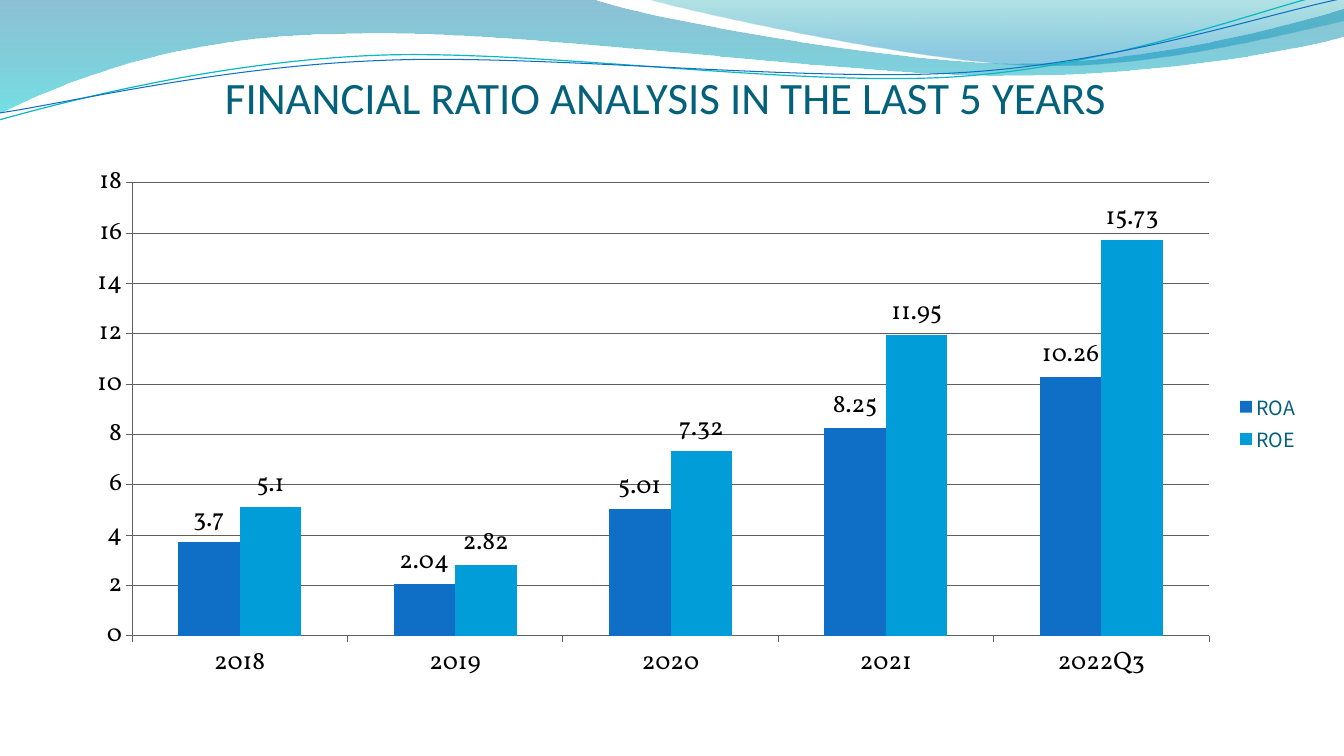
import pptx
import pptx.chart.data
import pptx.dml.color
import pptx.enum.chart
import pptx.enum.text
import pptx.oxml.ns
import pptx.util
import lxml.etree

RGB = pptx.dml.color.RGBColor
DEEP_BLUE = RGB(0x00, 0x74, 0xA1)
CYAN = RGB(0x00, 0xC6, 0xCF)
TEAL = RGB(0x00, 0xA1, 0xA9)
SKY = RGB(0x00, 0x8B, 0xBF)
TEAL_LINE = RGB(0x0A, 0xB8, 0xBF)
BLUE = RGB(0x0F, 0x6F, 0xC6)
LIGHT_BLUE = RGB(0x00, 0x9D, 0xD9)
TITLE_BLUE = RGB(0x04, 0x61, 0x7B)
BLACK = RGB(0x00, 0x00, 0x00)
GREY = RGB(0x60, 0x60, 0x60)
qn = pptx.oxml.ns.qn


def apply(target, values):
    for name, value in values.items():
        setattr(target, name, value)


def draw_outline(slide, start, segments, closed):
    emu = [[pptx.util.Inches(number) for number in segment] for segment in segments]
    builder = slide.shapes.build_freeform(*[pptx.util.Inches(number) for number in start])
    builder.add_line_segments([segment[-2:] for segment in emu], close=closed)
    shape = builder.convert_to_shape()
    shape.shadow.inherit = False
    edges = list(shape.element.spPr.iter(qn("a:lnTo")))
    for edge, segment in zip(edges, emu):
        if len(segment) == 6:
            curve = lxml.etree.Element(qn("a:cubicBezTo"))
            for x, y in zip(segment[::2], segment[1::2]):
                point = lxml.etree.SubElement(curve, qn("a:pt"))
                point.set("x", str(x - shape.left))
                point.set("y", str(y - shape.top))
            edge.getparent().replace(edge, curve)
    return shape


deck = pptx.Presentation()
apply(deck, {"slide_width": pptx.util.Inches(13.33), "slide_height": pptx.util.Inches(7.5)})
column = deck.slide_width / 100
row = deck.slide_height / 100
slide = deck.slides.add_slide(deck.slide_layouts[5])

waves = [
    ((0, -0.01),
     [(5.87, -0.01), (6.34, 0.17, 8.85, 0.63, 10.11, 0.63),
      (11.38, 0.63, 12.78, 0.26, 13.33, 0.09), (13.35, 0.36),
      (13.11, 0.44, 11.6, 0.76, 9.94, 0.75), (8.29, 0.75, 5.09, 0.28, 3.43, 0.34),
      (1.72, 0.35, 0.61, 0.83, -0.01, 1.13)],
     [(0, DEEP_BLUE, 45), (1, CYAN, 55)]),
    ((6.39, -0.01),
     [(6.79, 0.11, 9.09, 0.62, 10.25, 0.65), (11.41, 0.69, 12.82, 0.32, 13.33, 0.21),
      (13.33, 0)],
     [(0, TEAL, 30), (0.8, SKY, 45)]),
]
for start, segments, stops in waves:
    wave = draw_outline(slide, start, segments, True)
    wave.line.fill.background()
    wave.fill.gradient()
    wave.fill.gradient_angle = 270
    for stop, (position, color, opacity) in zip(wave.fill.gradient_stops, stops):
        stop.position = position
        stop.color.rgb = color
    tints = list(wave.element.spPr.iter(qn("a:srgbClr")))
    for tint, (position, color, opacity) in zip(tints, stops):
        lxml.etree.SubElement(tint, qn("a:alpha")).set("val", str(opacity * 1000))

strands = [
    ((-0.01, 1.19),
     [(0.64, 1.01, 2.11, 0.62, 3.69, 0.55), (5.27, 0.48, 7.9, 0.87, 9.5, 0.76),
      (11.1, 0.65, 12.52, 0.08, 13.31, -0.1)], TEAL_LINE, 0.85),
    ((0, 1.12),
     [(0.63, 1.03, 2.18, 0.66, 3.78, 0.6), (5.37, 0.53, 7.96, 0.82, 9.55, 0.72),
      (11.15, 0.62, 12.55, 0.14, 13.34, -0.02)], BLUE, 0.75),
]
for start, segments, color, width in strands:
    strand = draw_outline(slide, start, segments, False)
    strand.fill.background()
    strand.line.color.rgb = color
    strand.line.width = pptx.util.Pt(width)

title = slide.shapes.title
title.element.getparent().append(title.element)
apply(title, {"left": int(12.98 * column), "top": int(8.27 * row),
              "width": int(73.14 * column), "height": int(8.13 * row)})
title.text_frame.text = "FINANCIAL RATIO ANALYSIS IN THE LAST 5 YEARS"
apply(title.text_frame, {
    "word_wrap": True, "auto_size": pptx.enum.text.MSO_AUTO_SIZE.NONE,
    "vertical_anchor": pptx.enum.text.MSO_ANCHOR.BOTTOM,
    "margin_left": 0, "margin_right": 0, "margin_bottom": 0,
    "margin_top": pptx.util.Inches(0.05)})
para = title.text_frame.paragraphs[0]
para.alignment = pptx.enum.text.PP_ALIGN.CENTER
span = para.runs[0]
apply(span.font, {"name": "Calibri", "size": pptx.util.Pt(32)})
span.font.color.rgb = TITLE_BLUE

ratios = pptx.chart.data.CategoryChartData()
ratios.categories = ["2018", "2019", "2020", "2021", "2022Q3"]
ratios.add_series("ROA", [3.7, 2.04, 5.01, 8.25, 10.26])
ratios.add_series("ROE", [5.1, 2.82, 7.32, 11.95, 15.73])
chart = slide.shapes.add_chart(
    pptx.enum.chart.XL_CHART_TYPE.COLUMN_CLUSTERED,
    int(5.4 * column), int(20.4 * row), int(92.12 * column), int(71.07 * row), ratios).chart
apply(chart, {"has_title": False, "has_legend": True})
apply(chart.font, {"name": "Vollkorn", "size": pptx.util.Pt(18)})
chart.font.color.rgb = BLACK

apply(chart.legend, {"position": pptx.enum.chart.XL_LEGEND_POSITION.RIGHT,
                     "include_in_layout": False})
apply(chart.legend.font, {"name": "Noto Sans CJK SC", "size": pptx.util.Pt(14)})
chart.legend.font.color.rgb = TITLE_BLUE

apply(chart.value_axis, {"minimum_scale": 0, "maximum_scale": 18, "major_unit": 2,
                         "has_major_gridlines": True})
for axis in (chart.category_axis, chart.value_axis):
    axis.major_tick_mark = pptx.enum.chart.XL_TICK_MARK.OUTSIDE
for ruled in (chart.category_axis, chart.value_axis, chart.value_axis.major_gridlines):
    ruled.format.line.color.rgb = GREY
    ruled.format.line.width = pptx.util.Pt(0.5)

plot = chart.plots[0]
apply(plot, {"gap_width": 150, "overlap": 0, "vary_by_categories": False})
for series, color in zip(plot.series, (BLUE, LIGHT_BLUE)):
    series.format.fill.solid()
    series.format.fill.fore_color.rgb = color
    apply(series.data_labels, {
        "show_value": True, "number_format": "General", "number_format_is_linked": False,
        "position": pptx.enum.chart.XL_LABEL_POSITION.OUTSIDE_END})

plot_area = chart.element.find(".//" + qn("c:plotArea"))
for old_layout in plot_area.findall(qn("c:layout")):
    plot_area.remove(old_layout)
layout = lxml.etree.Element(qn("c:layout"))
manual = lxml.etree.SubElement(layout, qn("c:manualLayout"))
for name, value in {"layoutTarget": "inner", "xMode": "edge", "yMode": "edge",
                    "x": 0.05, "y": 0.05, "w": 0.87, "h": 0.84}.items():
    lxml.etree.SubElement(manual, qn("c:" + name)).set("val", str(value))
for name, value in {"x": 0.048, "y": 0.053, "h": 0.843}.items():
    manual.find(qn("c:" + name)).set("val", str(value))
plot_area.insert(0, layout)

deck.save("out.pptx")
